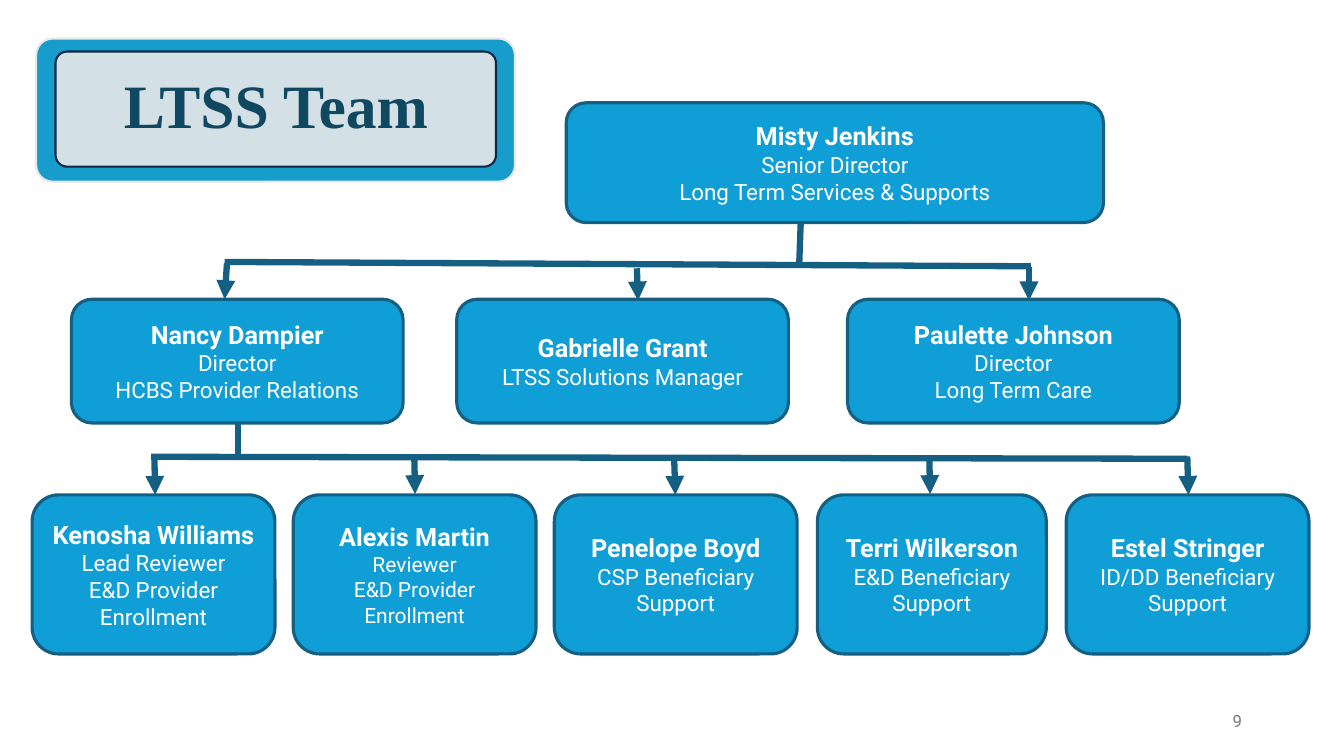
from lxml.etree import SubElement
from pptx import Presentation
from pptx.dml.color import RGBColor
from pptx.enum.shapes import MSO_CONNECTOR as Link, MSO_SHAPE as Kind
from pptx.enum.text import MSO_ANCHOR as Anchor, PP_ALIGN as Align
from pptx.oxml.ns import qn
from pptx.util import Cm, Pt

BLUE, EDGE, WHITE, GREY = "0F9ED5", "156082", "FFFFFF", "E8E8E8"


def paint(part, color):
    part.rgb = RGBColor.from_string(color)


def write(frame, lines, align=Align.CENTER):
    """Fill a text frame from (text, font values, color) lines."""
    frame.word_wrap = True
    frame.vertical_anchor = Anchor.MIDDLE
    for i, (text, look, color) in enumerate(lines):
        para = frame.add_paragraph() if i else frame.paragraphs[0]
        para.alignment = align
        run = para.add_run()
        run.text = text
        for key, value in look.items():
            setattr(run.font, key, value)
        paint(run.font.color, color)


deck = Presentation()
deck.slide_width, deck.slide_height = Cm(33.87), Cm(19.05)
slide = deck.slides.add_slide(deck.slide_layouts[6])
shapes = slide.shapes

# Title plate: outer frame, then the slightly clear inner panel
plates = [
    ((0.91, 0.97, 12.07, 3.61), 0.117, "169DCC", GREY),
    ((1.4, 1.3, 11.1, 2.9), 0.1, GREY, "0E2841"),
]
for spot, curve, fill, edge in plates:
    plate = shapes.add_shape(Kind.ROUNDED_RECTANGLE, *map(Cm, spot))
    plate.shadow.inherit = False
    plate.adjustments[0] = curve
    plate.fill.solid()
    paint(plate.fill.fore_color, fill)
    paint(plate.line.color, edge)
    plate.line.width = Pt(1.5)
tint = plate.fill._xPr.find(qn("a:solidFill"))[0]
SubElement(tint, qn("a:alpha"), val="90000")

title = shapes.add_textbox(Cm(-0.28), Cm(1.09), Cm(14.48), Cm(3.3)).text_frame
write(title, [("LTSS Team", dict(name="Times New Roman", size=Pt(44), bold=True), "104862")])
title.paragraphs[0].line_spacing = 0.9

# Lines: start, end, arrow or not
links = [
    (20.19, 5.31, 20.14, 6.68, False),
    (5.66, 6.6, 25.98, 6.71, False),
    (5.99, 10.26, 5.99, 11.53, False),
    (3.81, 11.51, 29.92, 11.56, False),
    (5.72, 6.63, 5.66, 7.54, True),
    (16.05, 6.76, 16.08, 7.57, True),
    (25.93, 6.73, 25.93, 7.57, True),
    (3.89, 11.48, 3.91, 12.47, True),
    (10.44, 11.48, 10.46, 12.45, True),
    (16.99, 11.53, 17.02, 12.47, True),
    (23.42, 11.53, 23.44, 12.45, True),
    (29.92, 11.5, 29.95, 12.47, True),
]
for *ends, arrow in links:
    link = shapes.add_connector(Link.STRAIGHT, *map(Cm, ends))
    paint(link.line.color, EDGE)
    link.line.width = Pt(4.5)
    if arrow:
        SubElement(link.line._get_or_add_ln(), qn("a:tailEnd"), type="triangle")
    SubElement(link._element.spPr, qn("a:effectLst"))

# Team rows: top, height, then left, width, role size and lines of each box
rows = [
    (2.59, 3.02, [
        (14.27, 13.54, 16, ["Misty Jenkins", "Senior Director", "Long Term Services & Supports"]),
    ]),
    (7.54, 3.12, [
        (1.8, 8.36, 16, ["Nancy Dampier", "Director", "HCBS Provider Relations"]),
        (11.51, 8.36, 16, ["Gabrielle Grant", "LTSS Solutions Manager"]),
        (21.36, 8.36, 16, ["Paulette Johnson", "Director", "Long Term Care"]),
    ]),
    (12.47, 4.01, [
        (0.81, 6.12, 16, ["Kenosha Williams", "Lead Reviewer", "E&D Provider Enrollment"]),
        (7.39, 6.12, 15, ["Alexis Martin", "Reviewer", "E&D Provider Enrollment"]),
        (13.97, 6.12, 16, ["Penelope Boyd", "CSP Beneficiary Support"]),
        (20.6, 5.77, 16, ["Terri Wilkerson", "E&D Beneficiary Support"]),
        (26.87, 6.12, 16, ["Estel Stringer", "ID/DD Beneficiary Support"]),
    ]),
]
for top, height, team in rows:
    for left, width, size, (name, *roles) in team:
        box = shapes.add_shape(Kind.ROUNDED_RECTANGLE, Cm(left), Cm(top), Cm(width), Cm(height))
        box.shadow.inherit = False
        box.fill.solid()
        paint(box.fill.fore_color, BLUE)
        paint(box.line.color, EDGE)
        box.line.width = Pt(2.25)
        head = dict(name="Roboto", size=Pt(18), bold=True)
        body = dict(name="Roboto", size=Pt(size), bold=False)
        write(box.text_frame, [(name, head, WHITE)] + [(role, body, WHITE) for role in roles])

# Page number
page = shapes.add_textbox(Cm(23.93), Cm(17.65), Cm(7.62), Cm(1.02)).text_frame
write(page, [("9", dict(name="Roboto", size=Pt(12)), "797979")], Align.RIGHT)

deck.save("out.pptx")
